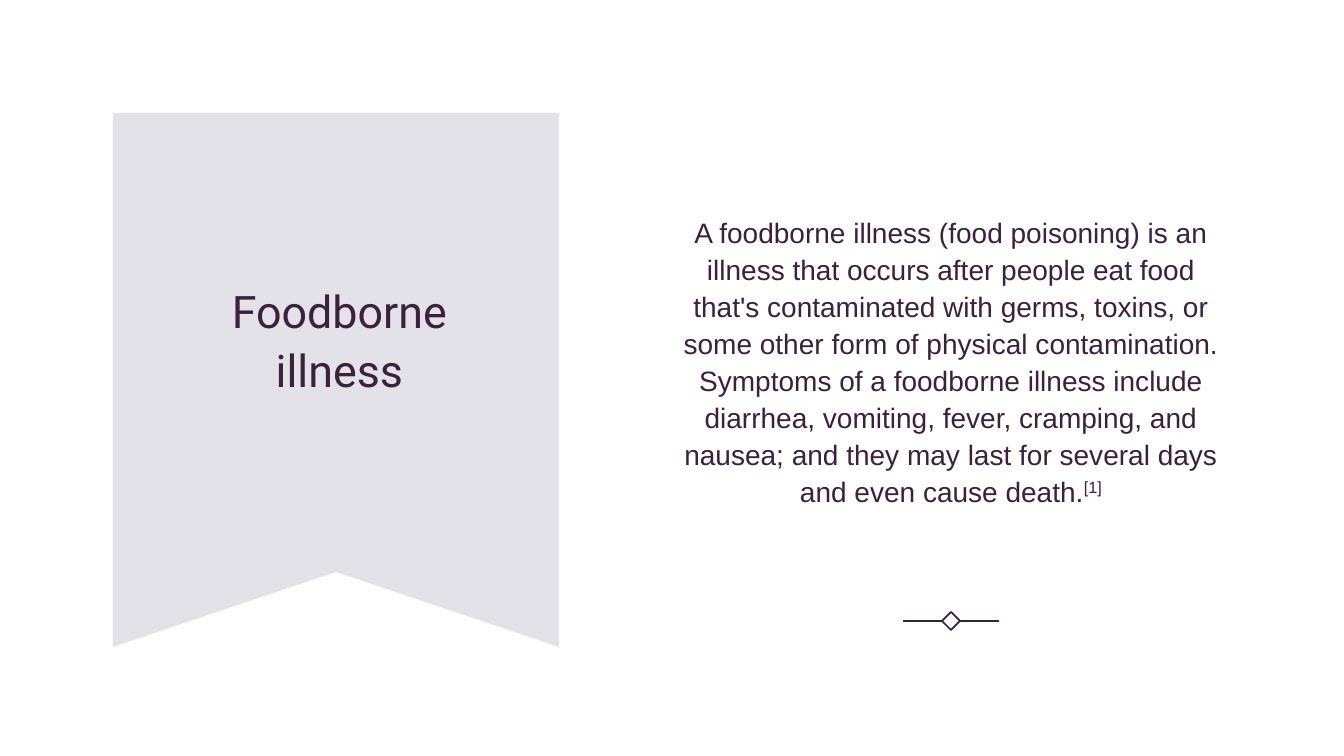
from lxml.etree import SubElement
from pptx import Presentation
from pptx.dml.color import RGBColor
from pptx.enum.shapes import MSO_CONNECTOR, MSO_SHAPE
from pptx.enum.text import MSO_ANCHOR, PP_ALIGN
from pptx.oxml.ns import qn
from pptx.util import Pt

EMU_PER_PX = 914400 / 100.8
INK = "3B213A"
LAVENDER = "E3E2E8"
WHITE = "FFFFFF"
DEFINITION = (
    "A foodborne illness (food poisoning) is an illness that occurs after people "
    "eat food that's contaminated with germs, toxins, or some other form of physical "
    "contamination. Symptoms of a foodborne illness include diarrhea, vomiting, fever, "
    "cramping, and nausea; and they may last for several days and even cause death."
)


def px(length):
    return round(length * EMU_PER_PX)


def color(hex_string):
    return RGBColor.from_string(hex_string)


def add_centered_text(slide, box, runs, font_name, size):
    frame = slide.shapes.add_textbox(*map(px, box)).text_frame
    frame.word_wrap = True
    frame.vertical_anchor = MSO_ANCHOR.MIDDLE
    paragraph = frame.paragraphs[0]
    paragraph.alignment = PP_ALIGN.CENTER
    paragraph.line_spacing = 1.1
    for text, baseline in runs:
        run = paragraph.add_run()
        run.text = text
        run.font.name = font_name
        run.font.size = Pt(size)
        run.font.color.rgb = color(INK)
        if baseline:
            run.font._element.set("baseline", str(baseline * 1000))


def add_banner(slide, box):
    left, top, width, height = box
    right, bottom, notch = left + width, top + height, 75
    outline = slide.shapes.build_freeform(px(left), px(top))
    outline.add_line_segments([
        (px(right), px(top)),
        (px(right), px(bottom)),
        (px(left + width / 2), px(bottom - notch)),
        (px(left), px(bottom)),
    ], close=True)
    banner = outline.convert_to_shape()
    banner.shadow.inherit = False
    banner.fill.solid()
    banner.fill.fore_color.rgb = color(LAVENDER)
    banner.line.fill.background()
    title_box = (left + 42, top + 55, 369, 338)
    add_centered_text(slide, title_box, [("Foodborne illness", 0)], "Roboto", 32)


def add_ornament(slide, box):
    left, top, width, height = box
    middle = top + height / 2
    diamond_left = left + (width - height) / 2
    diamond = slide.shapes.add_shape(
        MSO_SHAPE.DIAMOND, *map(px, (diamond_left, top, height, height)))
    diamond.shadow.inherit = False
    diamond.fill.background()
    diamond.line.color.rgb = color(INK)
    diamond.line.width = Pt(1.25)
    for outer, inner, site in ((left, diamond_left, 1),
                               (left + width, diamond_left + height, 3)):
        arm = slide.shapes.add_connector(
            MSO_CONNECTOR.STRAIGHT, px(outer), px(middle), px(inner), px(middle))
        arm.end_connect(diamond, site)
        arm.line.color.rgb = color(INK)
        arm.line.width = Pt(1.25)
        SubElement(arm._element.spPr, qn("a:effectLst"))


def add_definition(slide, box):
    left, top, width, height = box
    add_centered_text(slide, box, [(DEFINITION, 0), ("[1]", 30)], "Arial", 20)
    add_ornament(slide, (left + (width - 96) / 2, top + height + 6, 96, 18))


def main():
    presentation = Presentation()
    presentation.slide_width = px(1344)
    presentation.slide_height = px(756)
    slide = presentation.slides.add_slide(presentation.slide_layouts[6])
    slide.background.fill.solid()
    slide.background.fill.fore_color.rgb = color(WHITE)
    add_banner(slide, (113, 113, 446, 534))
    add_definition(slide, (672, 114, 558, 492))
    presentation.save("out.pptx")


if __name__ == "__main__":
    main()
